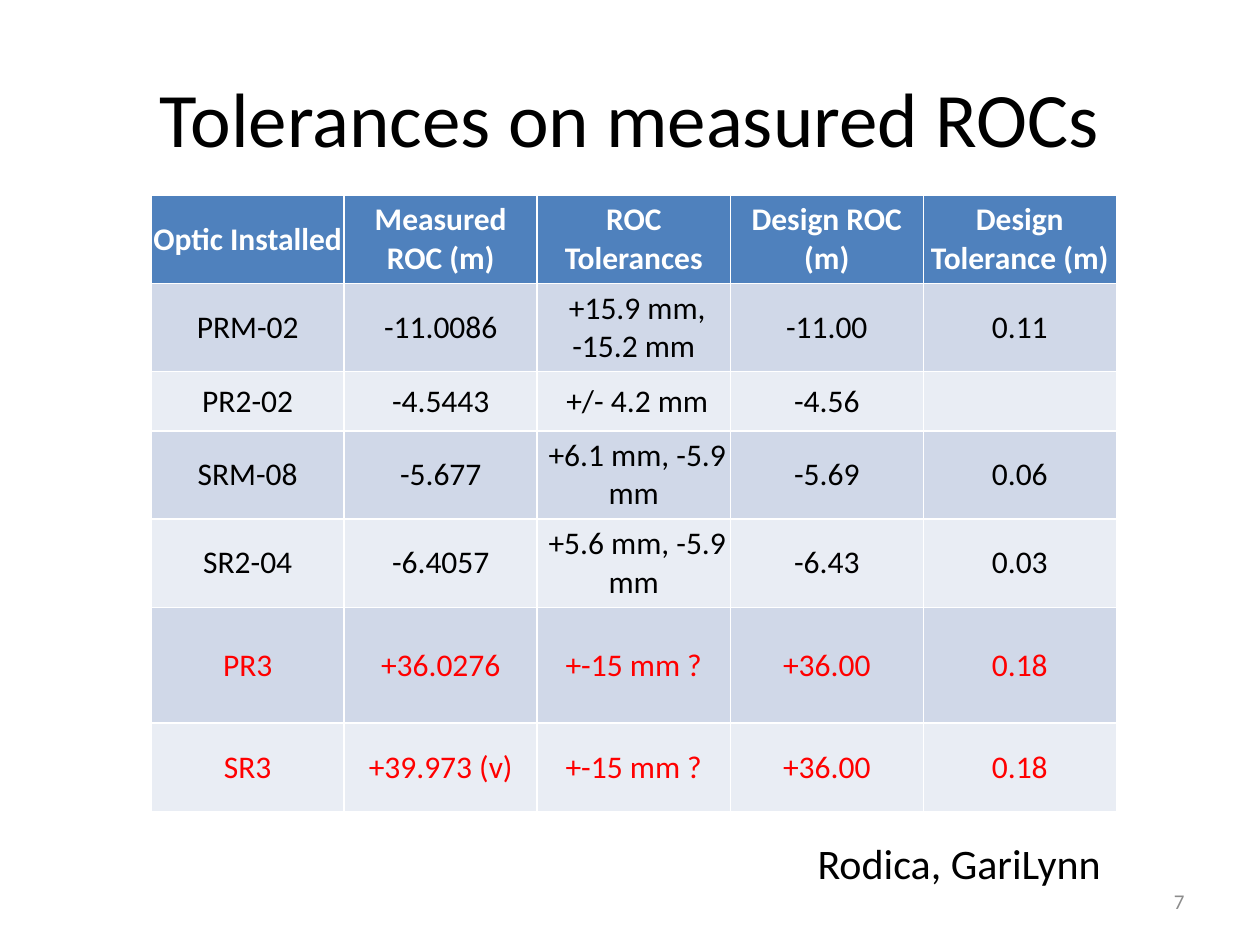
from pptx import Presentation
from pptx.dml.color import RGBColor
from pptx.enum.text import MSO_ANCHOR, PP_ALIGN
from pptx.util import Inches, Pt

THEME = {
    "font": "Calibri",
    "black": "000000",
    "white": "FFFFFF",
    "red": "FF0000",
    "gray": "8C8C8C",
    "header": "4F81BD",
    "bands": ("E9EDF4", "D0D8E8"),
    "title_size": 44,
    "credit_size": 24,
    "table_size": 18,
    "number_size": 12,
}


def write_text(frame, text, size, color="black", bold=False,
               align=PP_ALIGN.CENTER, anchor=MSO_ANCHOR.MIDDLE):
    frame.word_wrap = True
    frame.vertical_anchor = anchor
    paragraph = frame.paragraphs[0]
    paragraph.alignment = align
    paragraph.font.size = Pt(THEME[size])
    if text:
        run = paragraph.add_run()
        run.text = text
        run.font.name = THEME["font"]
        run.font.size = Pt(THEME[size])
        run.font.bold = bold
        run.font.color.rgb = RGBColor.from_string(THEME[color])


presentation = Presentation()
presentation.slide_width = Inches(10)
presentation.slide_height = Inches(7.5)
slide = presentation.slides.add_slide(presentation.slide_layouts[5])

title = slide.shapes.title
title.left, title.top = Inches(0.5), Inches(0.3)
title.width, title.height = Inches(9), Inches(1.25)
write_text(title.text_frame, "Tolerances on measured ROCs", "title_size")

number_box = slide.shapes.add_textbox(Inches(7.17), Inches(6.95), Inches(2.33), Inches(0.4))
write_text(number_box.text_frame, "7", "number_size", color="gray", align=PP_ALIGN.RIGHT)

rows = [
    ("Optic Installed", "Measured ROC (m)", "ROC Tolerances", "Design ROC (m)", "Design Tolerance (m)"),
    ("PRM-02", "-11.0086", " +15.9 mm, -15.2 mm", "-11.00", "0.11"),
    ("PR2-02", "-4.5443", " +/- 4.2 mm", "-4.56", ""),
    ("SRM-08", "-5.677", " +6.1 mm, -5.9 mm", "-5.69", "0.06"),
    ("SR2-04", "-6.4057", " +5.6 mm, -5.9 mm", "-6.43", "0.03"),
    ("PR3", "+36.0276", "+-15 mm ?", "+36.00", "0.18"),
    ("SR3", "+39.973 (v)", "+-15 mm ?", "+36.00", "0.18"),
]
row_heights = (0.7, 0.7, 0.47, 0.7, 0.7, 0.92, 0.7)
red_optics = ("PR3", "SR3")

table = slide.shapes.add_table(
    len(rows), len(rows[0]), Inches(1.2), Inches(1.55), Inches(7.66), Inches(sum(row_heights))
).table
for row_index, (values, height) in enumerate(zip(rows, row_heights)):
    table.rows[row_index].height = Inches(height)
    is_header = row_index == 0
    fill = THEME["header"] if is_header else THEME["bands"][row_index % 2]
    color = "white" if is_header else "red" if values[0] in red_optics else "black"
    for column_index, value in enumerate(values):
        cell = table.cell(row_index, column_index)
        cell.margin_left = cell.margin_right = cell.margin_top = cell.margin_bottom = 0
        cell.vertical_anchor = MSO_ANCHOR.MIDDLE
        cell.fill.solid()
        cell.fill.fore_color.rgb = RGBColor.from_string(fill)
        write_text(cell.text_frame, value, "table_size", color=color, bold=is_header)

credit_box = slide.shapes.add_textbox(Inches(6.39), Inches(6.6), Inches(2.46), Inches(0.5))
write_text(credit_box.text_frame, "Rodica, GariLynn", "credit_size",
           align=PP_ALIGN.LEFT, anchor=MSO_ANCHOR.TOP)

presentation.save("out.pptx")
